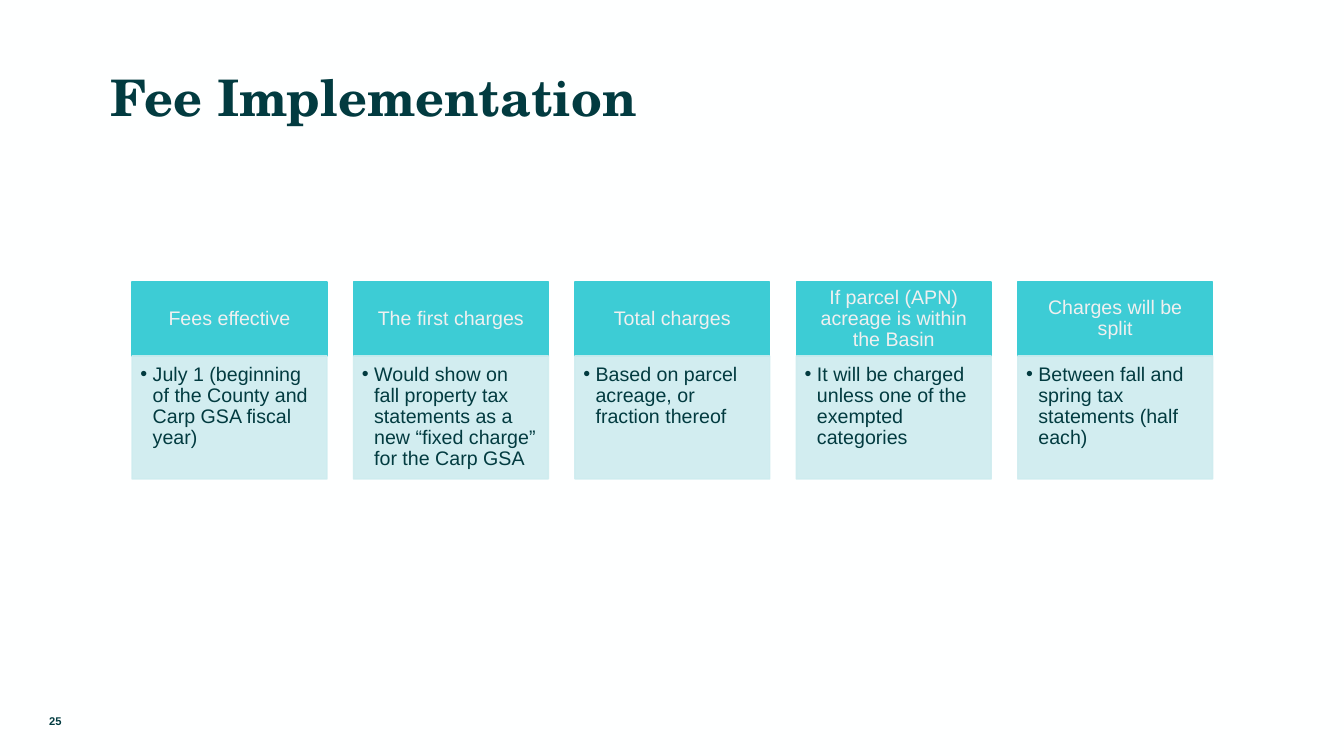
from lxml.etree import SubElement
from pptx import Presentation
from pptx.dml.color import RGBColor
from pptx.enum.shapes import MSO_SHAPE
from pptx.enum.text import MSO_ANCHOR, MSO_AUTO_SIZE, PP_ALIGN
from pptx.oxml.ns import qn
from pptx.util import Cm, Pt

STEPS = [
    ("Fees effective",
     "July 1 (beginning of the County and Carp GSA fiscal year)"),
    ("The first charges",
     "Would show on fall property tax statements as a new “fixed charge” for the Carp GSA"),
    ("Total charges",
     "Based on parcel acreage, or fraction thereof"),
    ("If parcel (APN) acreage is within the Basin",
     "It will be charged unless one of the exempted categories"),
    ("Charges will be split",
     "Between fall and spring tax statements (half each)"),
]


def color(hex_string):
    return RGBColor.from_string(hex_string)


def set_opacity(element, percent):
    """Add an alpha value to the solid colour found below an XML element."""
    solid_color = element.find(f".//{qn('a:srgbClr')}")
    SubElement(solid_color, qn("a:alpha"), val=str(percent * 1000))


def apply_format(target, values):
    for name, value in values.items():
        setattr(target, name, value)


class SlideBuilder:
    background = "FEFFFF"
    dark = "023B40"
    light_text = "F0F0F0"
    header_fill = "3DCCD5"
    body_fill = "CEECEF"
    body_font = "Arial"
    title_font = "TeX Gyre Schola"

    def __init__(self, presentation):
        self.slide = presentation.slides.add_slide(presentation.slide_layouts[5])
        fill = self.slide.background.fill
        fill.solid()
        fill.fore_color.rgb = color(self.background)

    def set_text(self, shape, text, size, font_color, margins, anchor=MSO_ANCHOR.MIDDLE,
                 alignment=PP_ALIGN.CENTER, font_name=body_font, bold=False,
                 line_spacing=1.0):
        """Fill a shape with one formatted paragraph; margins run left, top, right, bottom."""
        left, top, right, bottom = (Cm(margin) for margin in margins)
        frame = shape.text_frame
        apply_format(frame, {
            "text": text, "word_wrap": True, "auto_size": MSO_AUTO_SIZE.NONE,
            "vertical_anchor": anchor, "margin_left": left, "margin_top": top,
            "margin_right": right, "margin_bottom": bottom,
        })
        paragraph = frame.paragraphs[0]
        apply_format(paragraph, {"alignment": alignment, "line_spacing": line_spacing})
        font = paragraph.runs[0].font
        apply_format(font, {"name": font_name, "size": Pt(size), "bold": bold})
        font.color.rgb = color(font_color)
        return paragraph

    def title(self, text, left, top, width, height):
        shape = self.slide.shapes.title
        apply_format(shape, {"left": Cm(left), "top": Cm(top),
                             "width": Cm(width), "height": Cm(height)})
        self.set_text(shape, text, 36, self.dark, (0, 0.53, 0, 0),
                      alignment=PP_ALIGN.LEFT, font_name=self.title_font, bold=True)

    def box(self, left, top, width, height, fill_color, opacity=100):
        shape = self.slide.shapes.add_shape(
            MSO_SHAPE.RECTANGLE, Cm(left), Cm(top), Cm(width), Cm(height))
        shape.shadow.inherit = False
        shape.line.width = Pt(1)
        for fill in (shape.fill, shape.line.fill):
            fill.solid()
            fill.fore_color.rgb = color(fill_color)
        if opacity < 100:
            properties = shape.element.spPr
            for tag in ("a:solidFill", "a:ln"):
                set_opacity(properties.find(qn(tag)), opacity)
        return shape

    def header(self, text, left, top, width, height):
        shape = self.box(left, top, width, height, self.header_fill)
        self.set_text(shape, text, 14, self.light_text, (0.28, 0.16, 0.28, 0.16),
                      line_spacing=0.9)

    def bullet_box(self, text, left, top, width, height):
        shape = self.box(left, top, width, height, self.body_fill, opacity=90)
        paragraph = self.set_text(shape, text, 14, self.dark, (0.21, 0.21, 0.28, 0.32),
                                  anchor=MSO_ANCHOR.TOP, alignment=PP_ALIGN.LEFT,
                                  line_spacing=0.9)
        properties = paragraph._p.get_or_add_pPr()
        properties.set("marL", str(Cm(0.31)))
        properties.set("indent", str(-Cm(0.31)))
        SubElement(properties, qn("a:buFont"), typeface=self.body_font)
        SubElement(properties, qn("a:buChar"), char="•")

    def page_number(self, text, left, top, width, height):
        shape = self.slide.shapes.add_textbox(Cm(left), Cm(top), Cm(width), Cm(height))
        self.set_text(shape, text, 8, self.dark, (0.25, 0.13, 0.25, 0.13), bold=True)


def main():
    presentation = Presentation()
    presentation.slide_width = Cm(33.87)
    presentation.slide_height = Cm(19.05)

    builder = SlideBuilder(presentation)
    builder.title("Fee Implementation", 2.79, 0.38, 28.27, 3.58)

    first_left, pitch, width = 3.33, 5.58, 4.91
    header_top, header_height, body_height = 7.11, 1.86, 3.1
    for index, (heading, detail) in enumerate(STEPS):
        left = first_left + index * pitch
        builder.header(heading, left, header_top, width, header_height)
        builder.bullet_box(detail, left, header_top + header_height, width, body_height)

    builder.page_number("25", 0, 17.65, 2.79, 1.02)
    presentation.save("out.pptx")


if __name__ == "__main__":
    main()
